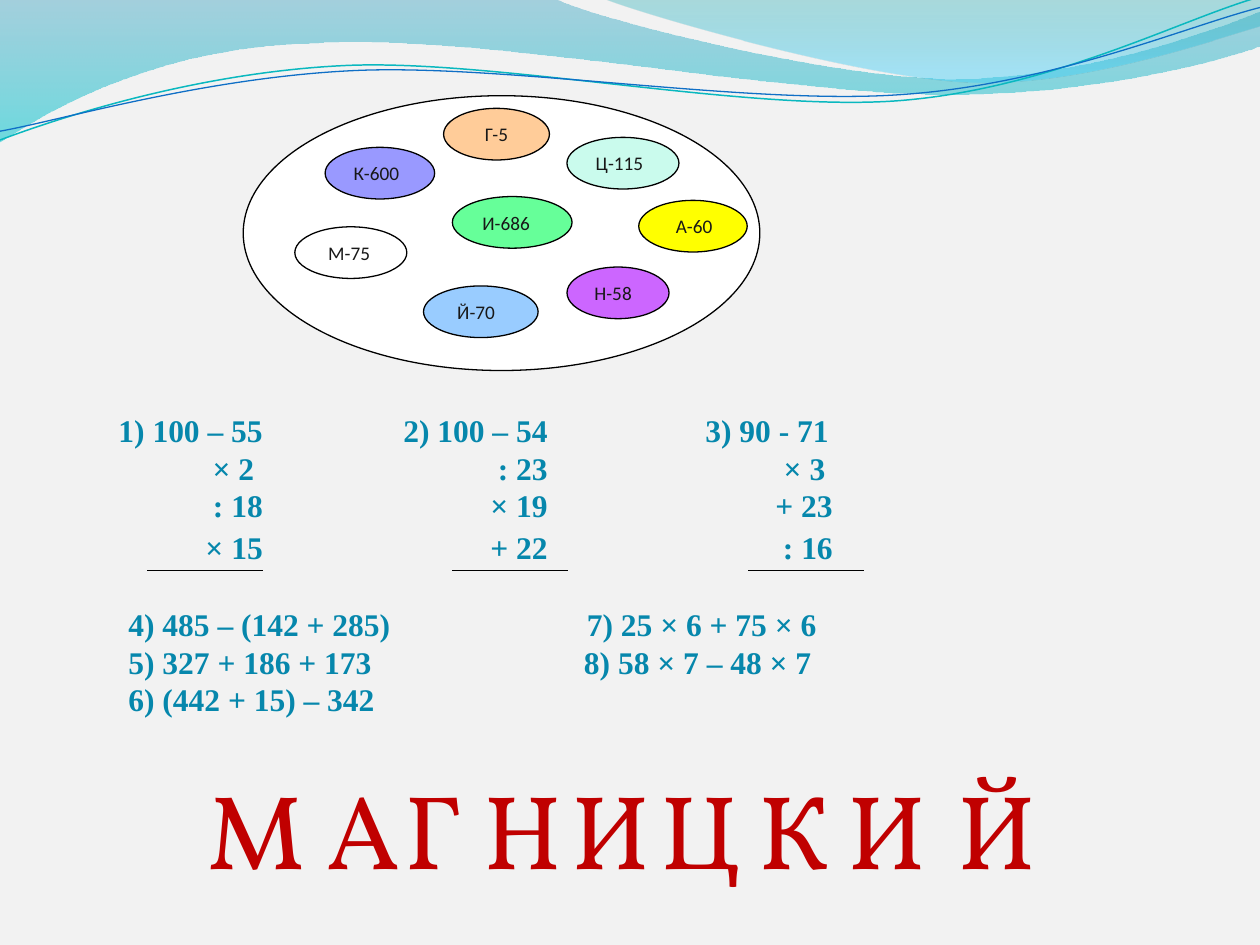
from dataclasses import dataclass

from lxml import etree
from pptx import Presentation
from pptx.dml.color import RGBColor
from pptx.enum.shapes import MSO_CONNECTOR, MSO_SHAPE
from pptx.enum.text import MSO_ANCHOR, PP_ALIGN
from pptx.oxml.ns import qn
from pptx.util import Pt

OVAL = MSO_SHAPE.OVAL
STRAIGHT = MSO_CONNECTOR.STRAIGHT
MIDDLE = MSO_ANCHOR.MIDDLE
LEFT = PP_ALIGN.LEFT


@dataclass(frozen=True)
class Theme:
    background: str = "F2F2F2"
    ink: str = "000000"
    paper: str = "FFFFFF"
    badge_text: str = "181818"
    task: str = "0687AC"
    answer: str = "C00000"
    badge_font: str = "Calibri"
    task_font: str = "Times New Roman"
    answer_font: str = "Vollkorn"
    badge_size: float = 11
    task_size: float = 18
    answer_size: float = 60
    outline: float = 0.75
    task_leading: float = 21.4


THEME = Theme()

# Each wave: start point, then Bezier triples or single line points, in points.
BROAD_WAVE = [
    (0, 0), [(317, -0.7)],
    [(343, 12), (478, 45), (546, 45)], [(614, 45), (690, 19), (720, 6.5)],
    [(720.7, 26)],
    [(708, 32), (626, 55), (537, 54)], [(448, 54), (275, 20), (185, 24.5)],
    [(93, 26), (33, 60), (-0.7, 81.4)],
]
RIGHT_WAVE = [
    (345, -0.7),
    [(366, 8), (491, 44.6), (554, 47)], [(616, 49.7), (692, 23), (720, 15)],
    [(720, 0)],
]
TEAL_LINE = [
    (0, 80), [(34.6, 67), (114, 41), (199, 37.4)],
    [(284, 34), (427, 64), (513, 57.6)], [(600, 51), (675, 11), (718.6, -1.4)],
]
BLUE_LINE = [
    (0, 75), [(34, 69), (118, 44), (204, 40.3)],
    [(290, 36.7), (430, 60.5), (516, 54)], [(602, 48), (678, 15), (720, 4.3)],
]

BADGES = [  # label, fill, left, top, width, indent; places within the big oval
    ("К-600", "9999FF", 46.8, 29.5, 62.6, 0),
    ("И-686", "66FF99", 119.5, 57.6, 68.4, 0),
    ("М-75", "FFFFFF", 29.5, 74.9, 64, 2.5),
    ("Г-5", "FFCC99", 114.5, 7.2, 60.5, 7.5),
    ("Й-70", "99CCFF", 103, 108.7, 65.5, 2.5),
    ("Н-58", "CC66FF", 185, 97.9, 58.3, 0),
    ("Ц-115", "CAFBED", 185, 23.8, 64, 0),
    ("А-60", "FFFF00", 226, 59.8, 62, 5),
]
BADGE_HEIGHT = 29.5

CHAIN_STEPS = [  # text, right edges of its three columns
    ("\t1) 100 – 55\t2) 100 – 54\t3) 90 - 71", (103.5, 266.3, 426.9)),
    ("\t× 2\t: 23\t× 3", (98.5, 266.3, 424.9)),
    ("\t: 18\t× 19\t+ 23", (103.5, 266.3, 429.2)),
]
LAST_STEP = [("\t× 15\t+ 22\t: 16", (103.5, 266.3, 429.2))]
RULE_LEFTS = (84.2, 258.5, 427.7)
EXPRESSIONS = [  # text, left edge of its second column
    ("4) 485 – (142 + 285)\t7) 25 × 6 + 75 × 6", (262,)),
    ("5) 327 + 186 + 173\t8) 58 × 7 – 48 × 7", (260.3,)),
    ("6) (442 + 15) – 342", ()),
]
LETTERS = [  # letter, left, width
    ("М", 0, 69), ("А", 67.7, 55.4), ("Г", 112.3, 47.5),
    ("Н", 157.7, 62.6), ("И", 365.8, 62.6), ("Ц", 258.5, 61.2),
    ("К", 314.6, 55.4), ("И", 208, 62.6), ("Й", 428.4, 62.6),
]


def rgb(code):
    return RGBColor.from_string(code)


def style_run(paragraph, text, font, size, color, bold=False):
    run = paragraph.add_run()
    run.text = text
    run.font.name, run.font.size, run.font.bold = font, Pt(size), bold
    run.font.color.rgb = rgb(color)


def draw_wave(slide, box, wave, closed):
    """Build the outline from all points, then join each triple into a Bezier."""
    left, top = box
    start, *segments = wave
    points = [(Pt(left + x), Pt(top + y)) for segment in segments for x, y in segment]
    builder = slide.shapes.build_freeform(Pt(left + start[0]), Pt(top + start[1]))
    builder.add_line_segments(points, close=closed)
    shape = builder.convert_to_shape()
    shape.shadow.inherit = False
    steps = iter(list(shape.element.spPr.iter(qn("a:lnTo"))))
    for segment in segments:
        nodes = [next(steps) for _ in segment]
        if len(nodes) == 3:
            curve = etree.Element(qn("a:cubicBezTo"))
            nodes[0].addprevious(curve)
            for node in nodes:
                curve.append(node[0])
                node.getparent().remove(node)
    return shape


def add_waves(slide, box):
    bands = [(BROAD_WAVE, [("44A7C4", 0, 45), ("00C6CF", 1, 55)]),
             (RIGHT_WAVE, [("00A1A9", 0, 30), ("44CEF6", 0.8, 45)])]
    for wave, stops in bands:
        band = draw_wave(slide, box, wave, True)
        band.line.fill.background()
        band.fill.gradient()
        band.fill.gradient_angle = 270
        for stop, (color, position, _) in zip(band.fill.gradient_stops, stops):
            stop.color.rgb = rgb(color)
            stop.position = position
        for node, (_, _, opacity) in zip(band.element.spPr.iter(qn("a:srgbClr")), stops):
            etree.SubElement(node, qn("a:alpha")).set("val", str(opacity * 1000))
    for wave, color, width in ((TEAL_LINE, "0AB8BF", 0.85), (BLUE_LINE, "0F6FC6", 0.75)):
        strand = draw_wave(slide, box, wave, False)
        strand.fill.background()
        strand.line.color.rgb = rgb(color)
        strand.line.width = Pt(width)


def add_oval(slide, left, top, width, height, color):
    oval = slide.shapes.add_shape(OVAL, Pt(left), Pt(top), Pt(width), Pt(height))
    oval.shadow.inherit = False
    oval.fill.solid()
    oval.fill.fore_color.rgb = rgb(color)
    oval.line.color.rgb = rgb(THEME.ink)
    oval.line.width = Pt(THEME.outline)
    return oval


def add_letter_key(slide, box):
    """Big oval holding a badge for each letter and its number."""
    left, top, width, height = box
    add_oval(slide, left, top, width, height, THEME.paper)
    for label, color, x, y, badge_width, indent in BADGES:
        badge = add_oval(slide, left + x, top + y, badge_width, BADGE_HEIGHT, color)
        frame = badge.text_frame
        frame.margin_left = Pt(7.2 + indent)
        frame.vertical_anchor = MIDDLE
        frame.paragraphs[0].alignment = LEFT
        style_run(frame.paragraphs[0], label, THEME.badge_font, THEME.badge_size,
                  THEME.badge_text)


def add_rules(slide, box):
    """Result rules under the three chains of sums."""
    top, width = box
    for left in RULE_LEFTS:
        rule = slide.shapes.add_connector(STRAIGHT, Pt(left), Pt(top), Pt(left + width), Pt(top))
        rule.line.color.rgb = rgb(THEME.ink)
        rule.line.width = Pt(THEME.outline)
        etree.SubElement(rule.element.spPr, qn("a:effectLst"))


def add_tasks(slide, box, inset, lines, tab_side):
    """Lines of sums in columns; inset is the left and top margin."""
    frame = slide.shapes.add_textbox(*(Pt(length) for length in box)).text_frame
    frame.word_wrap = True
    frame.margin_left, frame.margin_top = (Pt(length) for length in inset)
    frame.margin_right = frame.margin_bottom = 0
    for i, (text, stops) in enumerate(lines):
        paragraph = frame.paragraphs[0] if i == 0 else frame.add_paragraph()
        paragraph.line_spacing = Pt(THEME.task_leading)
        style_run(paragraph, text, THEME.task_font, THEME.task_size, THEME.task, True)
        tabs = etree.SubElement(paragraph._p.get_or_add_pPr(), qn("a:tabLst"))
        for stop in stops:
            etree.SubElement(tabs, qn("a:tab"), pos=str(Pt(stop)), algn=tab_side)


def add_answer(slide, box):
    left, top, height = box
    for letter, x, width in LETTERS:
        area = slide.shapes.add_textbox(Pt(left + x), Pt(top), Pt(width), Pt(height))
        area.text_frame.word_wrap = False
        style_run(area.text_frame.paragraphs[0], letter, THEME.answer_font,
                  THEME.answer_size, THEME.answer)


def main():
    deck = Presentation()
    deck.slide_width, deck.slide_height = Pt(720), Pt(540)
    slide = deck.slides.add_slide(deck.slide_layouts[6])
    slide.background.fill.solid()
    slide.background.fill.fore_color.rgb = rgb(THEME.background)
    add_waves(slide, (0, 0))
    add_letter_key(slide, (139, 54.7, 295.2, 157))
    add_rules(slide, (326.2, 66))
    add_tasks(slide, (39.6, 230.4, 447.8, 94.3), (7.2, 4.8), CHAIN_STEPS, "r")
    add_tasks(slide, (39.6, 298.1, 447.8, 51.1), (7.2, 3.9), LAST_STEP, "r")
    add_tasks(slide, (44.6, 298.1, 432.7, 116.6), (28.8, 47.9), EXPRESSIONS, "l")
    add_answer(slide, (111.6, 433.4, 80))
    deck.save("out.pptx")


if __name__ == "__main__":
    main()
